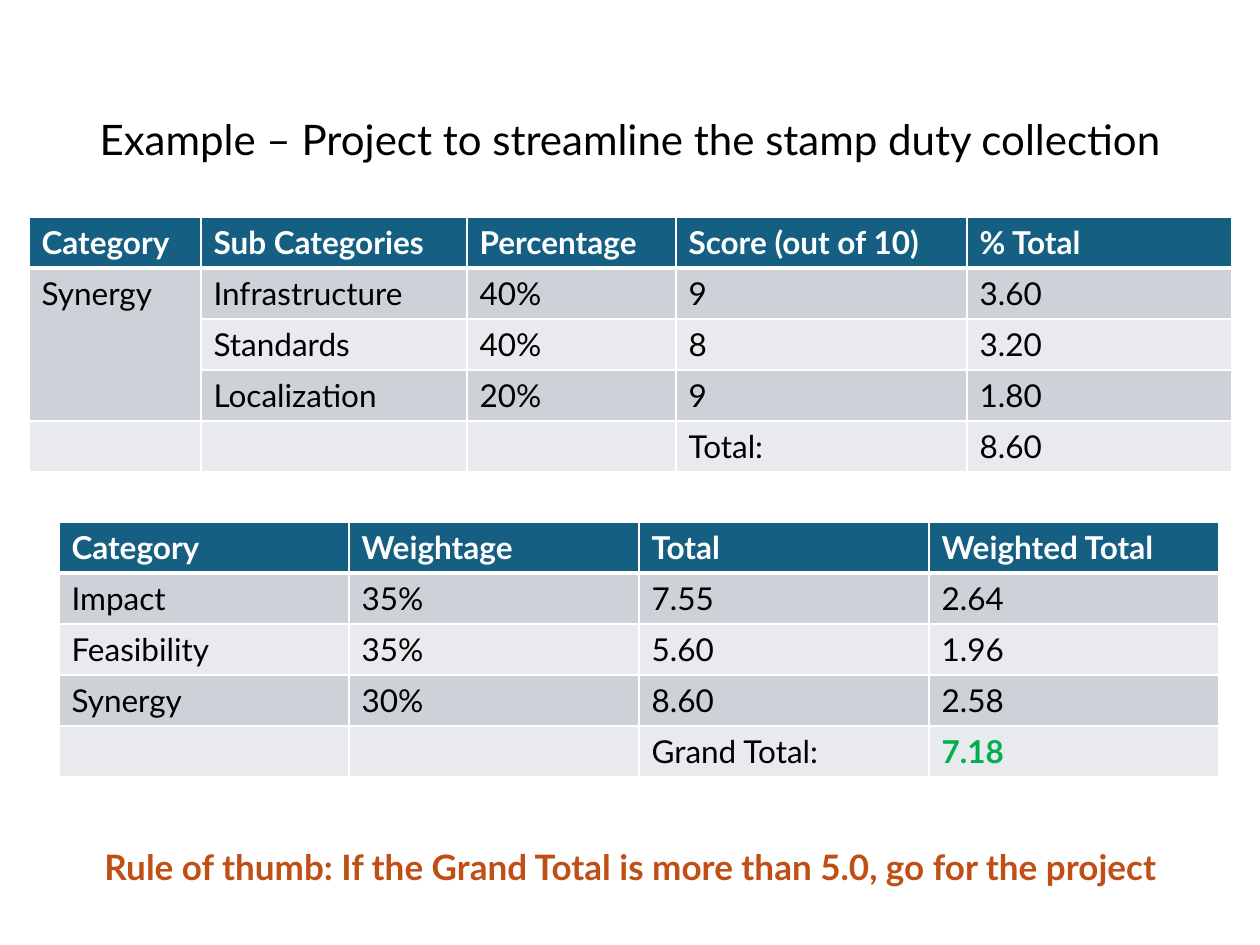
from lxml.etree import SubElement
from pptx import Presentation
from pptx.dml.color import RGBColor
from pptx.enum.text import MSO_ANCHOR, MSO_AUTO_SIZE, PP_ALIGN
from pptx.oxml.ns import qn
from pptx.util import Emu, Pt

PX = 914400 / 126
FONT = "Lato"
BLACK = RGBColor(0x00, 0x00, 0x00)
WHITE = RGBColor(0xFF, 0xFF, 0xFF)
HEADER = RGBColor(0x15, 0x60, 0x82)
BANDS = [RGBColor(0xE8, 0xEA, 0xED), RGBColor(0xCC, 0xD2, 0xD8)]
GREEN = RGBColor(0x00, 0xB0, 0x50)
ORANGE = RGBColor(0xC0, 0x4F, 0x15)
ROW_HEIGHT = 51

SYNERGY_ROWS = [
    ["Category", "Sub Categories", "Percentage", "Score (out of 10)", "% Total"],
    ["Synergy", "Infrastructure", "40%", "9", "3.60"],
    ["", "Standards", "40%", "8", "3.20"],
    ["", "Localization", "20%", "9", "1.80"],
    ["", "", "", "Total:", "8.60"],
]
GRAND_ROWS = [
    ["Category", "Weightage", "Total", "Weighted Total"],
    ["Impact", "35%", "7.55", "2.64"],
    ["Feasibility", "35%", "5.60", "1.96"],
    ["Synergy", "30%", "8.60", "2.58"],
    ["", "", "Grand Total:", "7.18"],
]


def px(n):
    return Emu(round(n * PX))


def write(tf, text, size=18, color=BLACK, bold=False, align=PP_ALIGN.LEFT):
    p = tf.paragraphs[0]
    p.alignment = align
    r = p.add_run()
    r.text = text
    r.font.name = FONT
    r.font.size = Pt(size)
    r.font.bold = bold
    r.font.color.rgb = color
    return p


def set_borders(cell, bottom):
    tc_pr = cell._tc.get_or_add_tcPr()
    for side, width in (("L", 1), ("R", 1), ("T", 1), ("B", bottom)):
        ln = SubElement(tc_pr, qn(f"a:ln{side}"), w=str(Pt(width)))
        fill = SubElement(ln, qn("a:solidFill"))
        SubElement(fill, qn("a:srgbClr"), val=str(WHITE))


def add_title(s, x, y, w, h):
    sp = s.shapes.title
    sp.left, sp.top, sp.width, sp.height = px(x), px(y), px(w), px(h)
    tf = sp.text_frame
    tf.word_wrap = True
    tf.auto_size = MSO_AUTO_SIZE.NONE
    tf.vertical_anchor = MSO_ANCHOR.MIDDLE
    p = write(tf, "Example – Project to streamline the stamp duty collection",
              size=24, align=PP_ALIGN.CENTER)
    p.line_spacing = 0.9


def add_score_table(s, x, y, widths, rows):
    table = s.shapes.add_table(len(rows), len(widths), px(x), px(y),
                               px(sum(widths)), px(ROW_HEIGHT * len(rows))).table
    for column, width in zip(table.columns, widths):
        column.width = px(width)
    for i, row in enumerate(rows):
        table.rows[i].height = px(ROW_HEIGHT)
        header = i == 0
        for j, text in enumerate(row):
            cell = table.cell(i, j)
            set_borders(cell, 3 if header else 1)
            cell.fill.solid()
            cell.fill.fore_color.rgb = HEADER if header else BANDS[i % 2]
            if text:
                write(cell.text_frame, text, bold=header,
                      color=WHITE if header else BLACK)
    return table


def add_rule(s, x, y, w, h):
    tf = s.shapes.add_textbox(px(x), px(y), px(w), px(h)).text_frame
    tf.word_wrap = False
    tf.auto_size = MSO_AUTO_SIZE.SHAPE_TO_FIT_TEXT
    write(tf, "Rule of thumb: If the Grand Total is more than 5.0, go for the project",
          size=20, color=ORANGE, bold=True)


def main():
    prs = Presentation()
    prs.slide_width, prs.slide_height = px(1260), px(945)
    s = prs.slides.add_slide(prs.slide_layouts[5])
    add_title(s, 86, 50, 1088, 183)
    synergy = add_score_table(s, 29, 217, [172, 266, 209, 291, 265], SYNERGY_ROWS)
    synergy.cell(1, 0).merge(synergy.cell(3, 0))
    grand = add_score_table(s, 59, 522, [290] * 4, GRAND_ROWS)
    font = grand.cell(4, 3).text_frame.paragraphs[0].runs[0].font
    font.bold = True
    font.color.rgb = GREEN
    add_rule(s, 92, 839, 1095, 55)
    prs.save("out.pptx")


if __name__ == "__main__":
    main()
